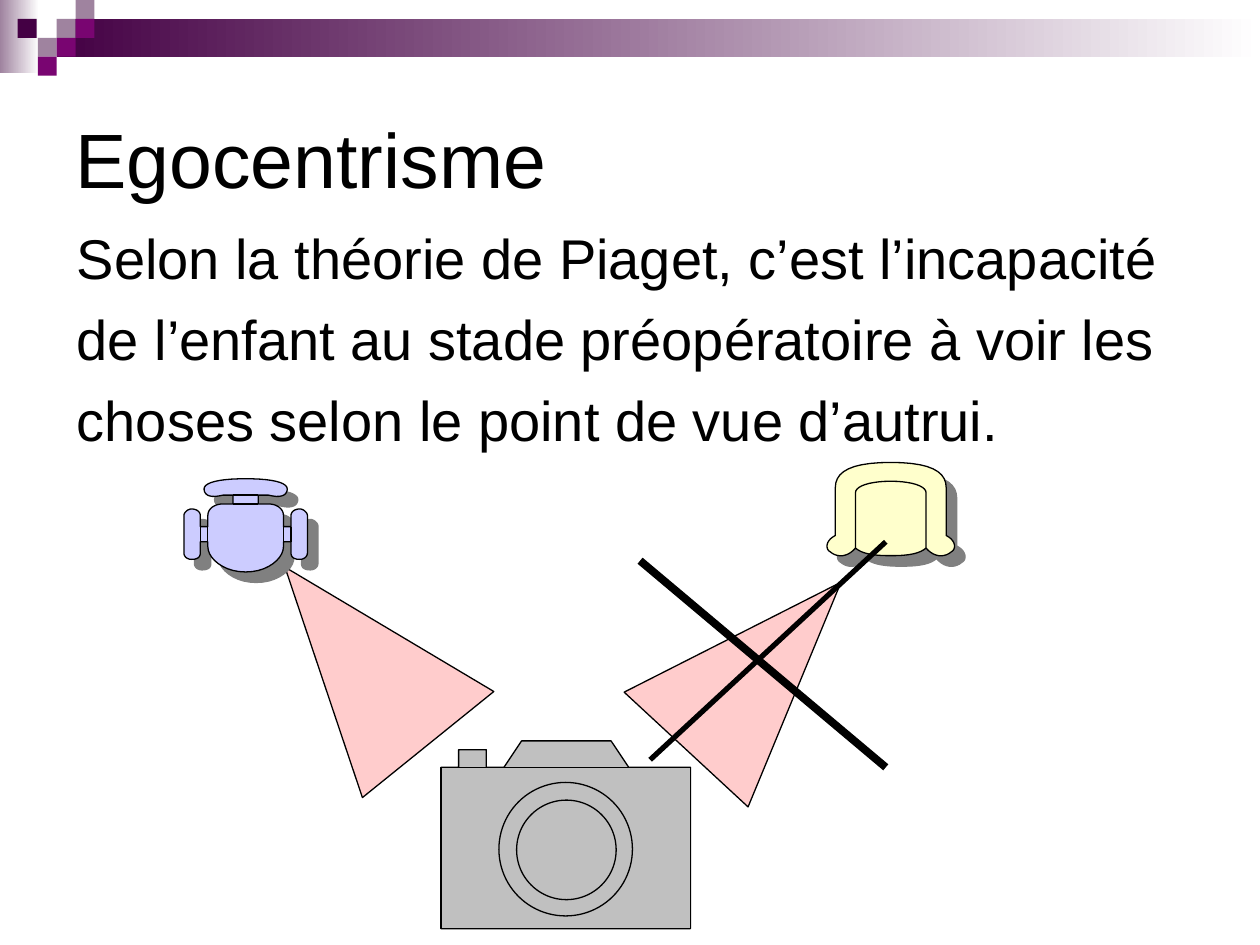
from lxml import etree
from pptx import Presentation
from pptx.dml.color import RGBColor
from pptx.enum.shapes import MSO_CONNECTOR, MSO_SHAPE
from pptx.enum.text import MSO_ANCHOR, MSO_AUTO_SIZE, PP_ALIGN
from pptx.oxml.ns import qn
from pptx.util import Emu, Pt

PX = 9144
RECTANGLE = MSO_SHAPE.RECTANGLE
OVAL = MSO_SHAPE.OVAL
TRIANGLE = MSO_SHAPE.ISOSCELES_TRIANGLE
STRAIGHT = MSO_CONNECTOR.STRAIGHT
MIDDLE, TOP = MSO_ANCHOR.MIDDLE, MSO_ANCHOR.TOP
LEFT = PP_ALIGN.LEFT
NO_AUTOFIT = MSO_AUTO_SIZE.NONE

LILAC, PLUM, MAGENTA = "9F839F", "440044", "790571"
SQUARES = [
    (45, 15, LILAC), (60, 0, LILAC), (60, 15, MAGENTA), (30, 30, LILAC),
    (14, 15, PLUM), (45, 30, MAGENTA), (30, 45, MAGENTA),
]
BODY_LINES = [
    "Selon la théorie de Piaget, c’est l’incapacité",
    "de l’enfant au stade préopératoire à voir les",
    "choses selon le point de vue d’autrui.",
]

DESK_CHAIR_AXIS = 195
DESK_CHAIR_HALF = [
    (195, 380), (174, 380, 162, 383, 162, 388), (162, 392, 165, 396, 177, 393),
    (185, 393), (185, 400), (177, 400), (170, 400, 165, 404, 165, 409),
    (165, 418), (159, 418), (159, 409), (159, 407, 157, 404, 152, 404),
    (149, 404, 146, 407, 146, 409), (146, 439), (146, 442, 149, 444, 152, 444),
    (157, 444, 159, 442, 159, 439), (159, 430), (165, 430), (165, 434),
    (165, 443, 177, 454, 195, 454),
]
DESK_CHAIR_JOINTS = [[(x, 418), (x, 430)] for x in (159, 165, 225, 231)]
DESK_CHAIR_JOINTS += [[(185, y), (205, y)] for y in (393, 400)]

ARMCHAIR_AXIS = 707
ARMCHAIR_HALF = [
    (707, 367), (676, 367, 663, 374, 663, 387), (663, 425),
    (655, 429, 655, 436, 659, 438), (665, 443, 673, 442, 679, 435),
    (685, 440, 695, 441, 707, 441),
]
ARMCHAIR_SEAT_HALF = [(679, 435), (679, 391), (679, 386, 690, 382, 707, 382)]

CAMERA_OUTLINE = [
    (350, 737), (350, 609), (364, 609), (364, 595), (386, 595), (386, 609),
    (400, 609), (414, 588), (485, 588), (499, 609), (548, 609), (548, 737),
]


def color(value):
    return RGBColor.from_string(value)


def px(*lengths):
    return [Emu(round(length * PX)) for length in lengths]


def flatten(segments, steps=10):
    points = [segments[0]]
    for segment in segments[1:]:
        if len(segment) == 2:
            points.append(segment)
            continue
        x0, y0 = points[-1]
        x1, y1, x2, y2, x3, y3 = segment
        for step in range(1, steps + 1):
            t = step / steps
            a, b, c, d = (1 - t) ** 3, 3 * t * (1 - t) ** 2, 3 * t * t * (1 - t), t ** 3
            points.append((a * x0 + b * x1 + c * x2 + d * x3,
                           a * y0 + b * y1 + c * y2 + d * y3))
    return points


def symmetric(half, axis):
    points = flatten(half)
    return points + [(2 * axis - x, y) for x, y in reversed(points[:-1])]


def write(para, text, size, font="Arial", ink="000000", before=0):
    para.alignment = LEFT
    para.space_before = Pt(before)
    span = para.add_run()
    span.text = text
    span.font.size = Pt(size)
    span.font.name = font
    span.font.color.rgb = color(ink)


class Page:
    ink = "000000"
    outline_width = 0.75
    shadow_ink = "808080"

    def __init__(self, deck):
        self.slide = deck.slides.add_slide(deck.slide_layouts[1])
        self.shapes = self.slide.shapes

    def placeholder(self, index, frame, lines, size, anchor, before=0, indent=0):
        box = self.slide.placeholders[index]
        box.left, box.top, box.width, box.height = px(*frame)
        text_frame = box.text_frame
        text_frame.vertical_anchor = anchor
        text_frame.auto_size = NO_AUTOFIT
        for number, line in enumerate(lines):
            para = text_frame.add_paragraph() if number else text_frame.paragraphs[0]
            write(para, line, size, before=before)
            properties = para._p.get_or_add_pPr()
            properties.set("marL", str(indent * PX))
            properties.set("indent", str(-indent * PX))
            etree.SubElement(properties, qn("a:buNone"))

    def finish(self, shape, fill, outlined=True):
        shape.shadow.inherit = False
        if fill:
            shape.fill.solid()
            shape.fill.fore_color.rgb = color(fill)
        else:
            shape.fill.background()
        if outlined:
            shape.line.color.rgb = color(self.ink)
            shape.line.width = Pt(self.outline_width)
        else:
            shape.line.fill.background()
        return shape

    def preset(self, kind, frame, fill, outlined=True, rotation=0):
        shape = self.shapes.add_shape(kind, *px(*frame))
        shape.rotation = rotation
        return self.finish(shape, fill, outlined)

    def gradient(self, frame, start, end):
        shape = self.preset(RECTANGLE, frame, start, outlined=False)
        shape.fill.gradient()
        shape.fill.gradient_angle = 0
        for stop, position, value in zip(shape.fill.gradient_stops, (0, 1), (start, end)):
            stop.position = position
            stop.color.rgb = color(value)

    def outline(self, points, fill, closed=True, details=()):
        builder = self.shapes.build_freeform(*px(*points[0]))
        builder.add_line_segments([px(*point) for point in points[1:]], close=closed)
        for start, end in details:
            builder.move_to(*px(*start))
            builder.add_line_segments([px(*end)], close=False)
        return self.finish(builder.convert_to_shape(), fill)

    def drop_shadow(self, shape):
        effects = shape._element.spPr.find(qn("a:effectLst"))
        shadow = etree.SubElement(effects, qn("a:outerShdw"), dist="107950",
                                  dir="2700000", algn="ctr", rotWithShape="0")
        etree.SubElement(shadow, qn("a:srgbClr"), val=self.shadow_ink)

    def line(self, start, end, width):
        connector = self.shapes.add_connector(STRAIGHT, *px(*start, *end))
        connector.line.color.rgb = color(self.ink)
        connector.line.width = Pt(width)
        etree.SubElement(connector._element.spPr, qn("a:effectLst"))


def main():
    deck = Presentation()
    deck.slide_width, deck.slide_height = px(1000, 750)
    page = Page(deck)

    page.gradient((0, 0, 31, 58), LILAC, "FFFFFF")
    page.gradient((45, 15, 955, 30), PLUM, "FFFFFF")
    for left, top, fill in SQUARES:
        page.preset(RECTANGLE, (left, top, 15, 15), fill, outlined=False)

    page.placeholder(0, (50, 50, 900, 150), ["Egocentrisme"], 44, MIDDLE)
    page.placeholder(1, (51, 172, 900, 234), BODY_LINES, 32, TOP, before=8, indent=38)

    for left, top, rotation in ((216, 430, 321.1), (539, 438, 42.8)):
        page.preset(TRIANGLE, (left, top, 134, 181), "FFCCCC", rotation=rotation)

    desk_chair = page.outline(symmetric(DESK_CHAIR_HALF, DESK_CHAIR_AXIS), "CCCCFF",
                              details=DESK_CHAIR_JOINTS)
    page.drop_shadow(desk_chair)
    armchair = page.outline(symmetric(ARMCHAIR_HALF, ARMCHAIR_AXIS), "FFFFCC")
    page.drop_shadow(armchair)
    page.outline(symmetric(ARMCHAIR_SEAT_HALF, ARMCHAIR_AXIS), None, closed=False)

    camera = "C0C0C0"
    page.outline(CAMERA_OUTLINE, camera)
    page.preset(RECTANGLE, (350, 609, 198, 128), camera)
    for left, top, diameter in ((396, 621, 106), (410, 635, 79)):
        page.preset(OVAL, (left, top, diameter, diameter), camera)

    page.line((508, 445), (703, 609), 4.5)
    page.line((516, 603), (703, 430), 3)
    deck.save("out.pptx")


if __name__ == "__main__":
    main()
